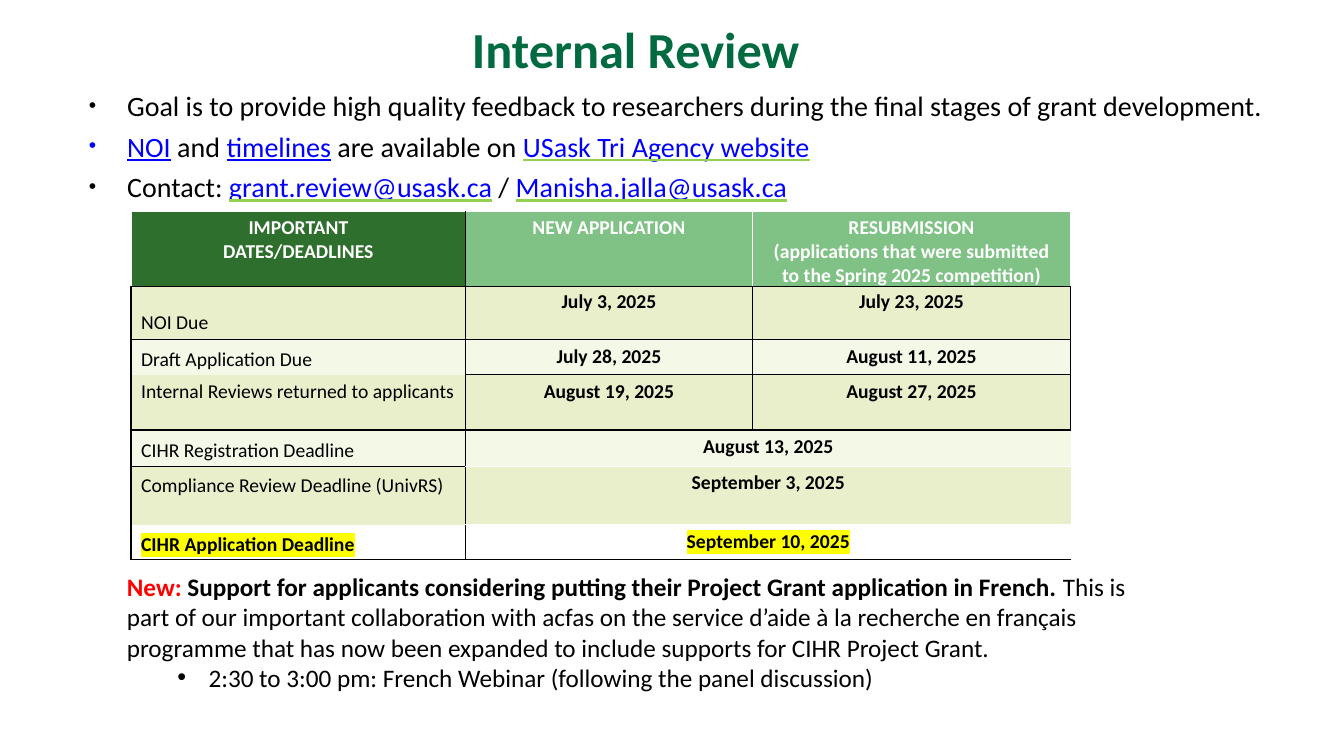
import pptx
import pptx.dml.color
import pptx.enum.text
import pptx.oxml
import pptx.oxml.ns
import pptx.util

WIDTH, HEIGHT = 13.33, 7.5
FONT = "Calibri"
COLOURS = {
    "title": "006A40", "text": "000000", "white": "FFFFFF", "link": "0000FF",
    "underline": "92D050", "new": "FF0000", "marker": "FFFF00",
    "dark head": "2F6F2D", "light head": "80C285",
    "odd row": "E8EFCA", "even row": "F4F8E7",
}
CENTRE = pptx.enum.text.PP_ALIGN.CENTER
COLUMN_SHARES = [24.91, 21.31, 23.71]
ROW_SHARES = [9.87, 7.07, 4.6, 7.33, 4.8, 7.73, 4.6]

HEADERS = [
    (["IMPORTANT", "DATES/DEADLINES"], "dark head"),
    (["NEW APPLICATION"], "light head"),
    (["RESUBMISSION", "(applications that were submitted to the Spring 2025 competition)"],
     "light head"),
]
DEADLINES = [
    ("NOI Due", 0.24, ["July 3, 2025", "July 23, 2025"]),
    ("Draft Application Due", 0.08, ["July 28, 2025", "August 11, 2025"]),
    ("Internal Reviews returned to applicants", 0.05, ["August 19, 2025", "August 27, 2025"]),
    ("CIHR Registration Deadline", 0.09, ["August 13, 2025"]),
    ("Compliance Review Deadline (UnivRS)", 0.08, ["September 3, 2025"]),
    ("CIHR Application Deadline", 0.08, ["September 10, 2025"]),
]
HORIZONTAL_LINES = [
    ["white"] * 3, ["text"] * 3, ["text"] * 3, [None, "text", "text"],
    ["text"] * 3, ["text", "white", "white"], [None, "white", "white"], ["text"] * 3,
]


def across(percent):
    return pptx.util.Inches(WIDTH * percent / 100)


def down(percent):
    return pptx.util.Inches(HEIGHT * percent / 100)


def element(tag, content="", **attributes):
    listed = "".join(f' {key}="{value}"' for key, value in attributes.items())
    return pptx.oxml.parse_xml(
        f"<a:{tag} {pptx.oxml.ns.nsdecls('a')}{listed}>{content}</a:{tag}>")


def colour_xml(name):
    return f'<a:solidFill><a:srgbClr val="{COLOURS[name]}"/></a:solidFill>'


def style_span(span, size, colour="text", bold=False, underline=None, marker=False):
    font = span.font
    font.name, font.size, font.bold = FONT, pptx.util.Pt(size), bold
    font.color.rgb = pptx.dml.color.RGBColor.from_string(COLOURS[colour])
    latin = font._element.find(pptx.oxml.ns.qn("a:latin"))
    if marker:
        latin.addprevious(element("highlight", f'<a:srgbClr val="{COLOURS["marker"]}"/>'))
    if underline:
        font.underline = True
        latin.addprevious(element("uFill", colour_xml(underline)))


def write(frame, text, size=14, align=None, before=0, indent=None, bullet_size=None, **style):
    spans = [(text, {})] if isinstance(text, str) else text
    para = frame.paragraphs[0]
    if para.runs:
        para = frame.add_paragraph()
        para.space_before = pptx.util.Pt(before)
    if align is not None:
        para.alignment = align
    if indent:
        properties = para._p.get_or_add_pPr()
        left, first = indent
        properties.set("marL", str(pptx.util.Inches(left)))
        properties.set("indent", str(pptx.util.Inches(first)))
        properties.append(element("buSzPct", val=bullet_size * 1000))
        properties.append(element("buFont", typeface="Arial"))
        properties.append(element("buChar", char="•"))
    for words, own_style in spans:
        span = para.add_run()
        span.text = words
        style_span(span, size, **{**style, **own_style})


def add_text_box(page, left, top, width, height, margins):
    box = page.shapes.add_textbox(across(left), down(top), across(width), down(height))
    frame = box.text_frame
    frame.word_wrap = True
    set_margins(frame, *margins)
    return frame


def set_margins(holder, left, top, right, bottom):
    holder.margin_left, holder.margin_top = pptx.util.Inches(left), pptx.util.Inches(top)
    holder.margin_right, holder.margin_bottom = pptx.util.Inches(right), pptx.util.Inches(bottom)


def fill_cell(cell, colour):
    if colour:
        cell.fill.solid()
        cell.fill.fore_color.rgb = pptx.dml.color.RGBColor.from_string(COLOURS[colour])
    else:
        cell.fill.background()


def add_borders(cell, row, column):
    outer = "white" if row == 0 else "text"
    merged = row > 3
    edges = {
        "lnL": [outer, "text", None if merged else outer][column],
        "lnR": ["text", None if merged else outer, outer][column],
        "lnT": HORIZONTAL_LINES[row][column],
        "lnB": HORIZONTAL_LINES[row + 1][column],
    }
    properties = cell._tc.get_or_add_tcPr()
    for tag, colour in edges.items():
        paint = colour_xml(colour) if colour else "<a:noFill/>"
        properties.append(element(tag, paint, w=pptx.util.Pt(1)))


def add_deadline_table(page):
    table = page.shapes.add_table(
        len(ROW_SHARES), len(COLUMN_SHARES), across(9.75), down(28),
        across(sum(COLUMN_SHARES)), down(sum(ROW_SHARES))).table
    table.horz_banding = False
    for column, share in zip(table.columns, COLUMN_SHARES):
        column.width = across(share)
    for row, share in zip(table.rows, ROW_SHARES):
        row.height = down(share)
    for row in range(len(ROW_SHARES)):
        for column in range(len(COLUMN_SHARES)):
            add_borders(table.cell(row, column), row, column)

    for column, (lines, colour) in enumerate(HEADERS):
        cell = table.cell(0, column)
        fill_cell(cell, colour)
        set_margins(cell, 0.17, 0.04, 0.17, 0)
        for line in lines:
            write(cell.text_frame, line, align=CENTRE, colour="white", bold=True)

    for row, (label, label_top, dates) in enumerate(DEADLINES, start=1):
        final = row == len(DEADLINES)
        colour = None if final else ("odd row" if row % 2 else "even row")
        for column in range(len(COLUMN_SHARES)):
            fill_cell(table.cell(row, column), colour)
        if len(dates) == 1:
            table.cell(row, 1).merge(table.cell(row, 2))
        cell = table.cell(row, 0)
        set_margins(cell, 0.1, label_top, 0, 0)
        write(cell.text_frame, label, bold=final, marker=final)
        for column, date in enumerate(dates, start=1):
            cell = table.cell(row, column)
            set_margins(cell, 0, 0.04 if row == 1 else 0.05, 0, 0)
            write(cell.text_frame, date, align=CENTRE, bold=True, marker=final)


def add_title(page):
    frame = add_text_box(page, 35.11, 2.27, 27.61, 8.4, (0, 0.01, 0, 0))
    write(frame, "Internal Review", size=36, colour="title", bold=True)


def add_goals(page):
    link = {"colour": "link", "underline": "link"}
    web_link = {"colour": "link", "underline": "underline"}
    goals = [
        "Goal is to provide high quality feedback to researchers during the final stages "
        "of grant development.",
        [("NOI", link), (" and ", {}), ("timelines", link), (" are available on ", {}),
         ("USask Tri Agency website", web_link)],
        [("Contact: ", {}), ("grant.review@usask.ca", web_link), (" / ", {}),
         ("Manisha.jalla@usask.ca", web_link)],
    ]
    frame = add_text_box(page, 6.53, 11.6, 89.8, 15.47, (0, 0.01, 0, 0))
    for goal in goals:
        write(frame, goal, size=20, before=4.8, indent=(0.39, -0.38), bullet_size=75)


def add_french_support(page):
    frame = add_text_box(page, 8.7, 74.93, 77.42, 21.6, (0.1, 0.05, 0.1, 0.05))
    write(frame, [
        ("New: ", {"colour": "new", "bold": True}),
        ("Support for applicants considering putting their Project Grant application "
         "in French. ", {"bold": True}),
        ("This is part of our important collaboration with acfas on the service d’aide à la "
         "recherche en français programme that has now been expanded to include supports "
         "for CIHR Project Grant.", {}),
    ], size=18)
    write(frame, "2:30 to 3:00 pm: French Webinar (following the panel discussion)",
          size=18, indent=(0.81, -0.31), bullet_size=100)


def main():
    deck = pptx.Presentation()
    deck.slide_width = pptx.util.Inches(WIDTH)
    deck.slide_height = pptx.util.Inches(HEIGHT)
    page = deck.slides.add_slide(deck.slide_layouts[6])
    add_title(page)
    add_goals(page)
    add_deadline_table(page)
    add_french_support(page)
    deck.save("out.pptx")


if __name__ == "__main__":
    main()
